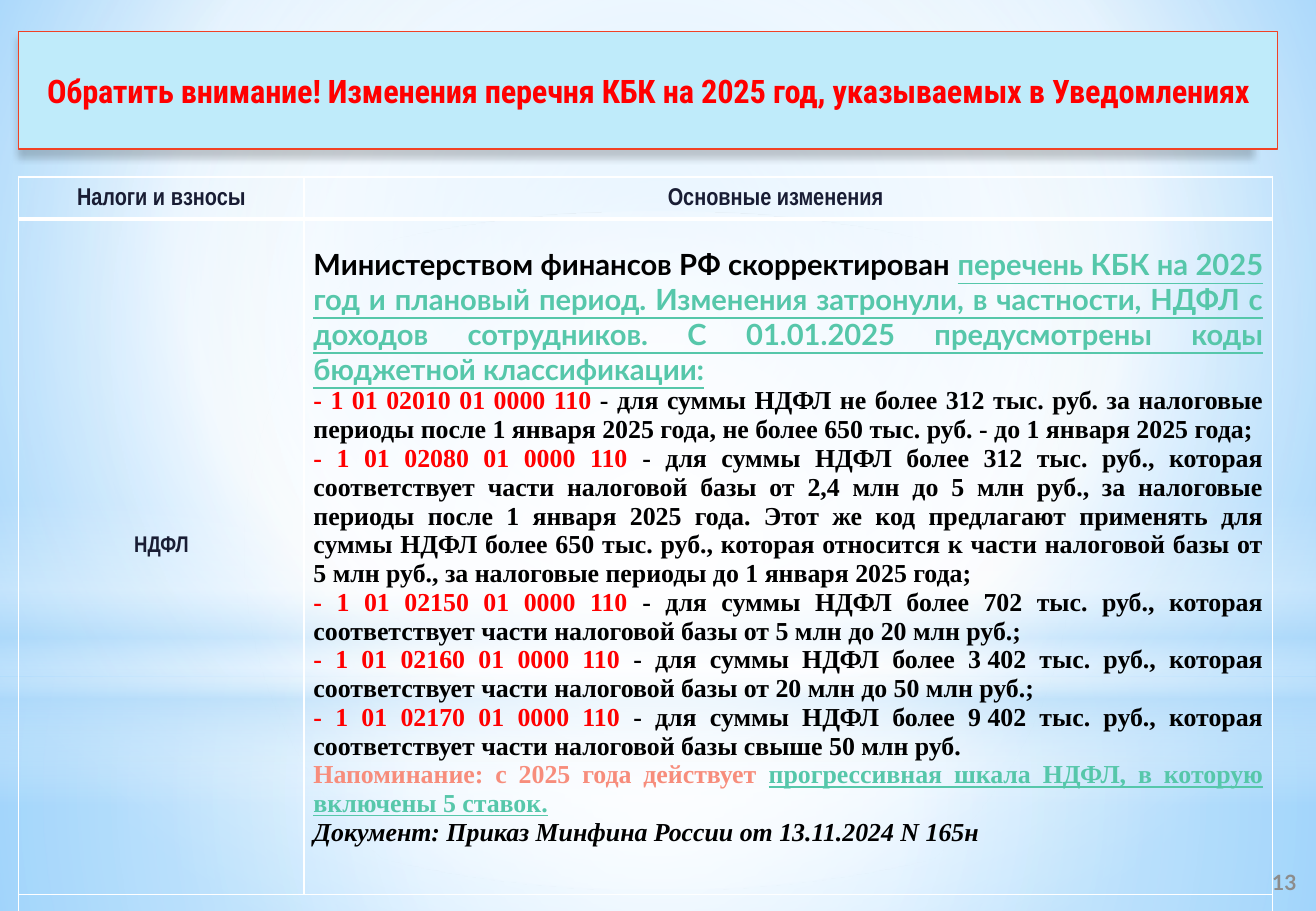
"""Builds the slide on the 2025 changes to the list of budget classification codes."""
from lxml.etree import SubElement
from pptx import Presentation
from pptx.dml.color import RGBColor
from pptx.enum.shapes import MSO_SHAPE as Shape
from pptx.enum.text import MSO_ANCHOR as Anchor, MSO_AUTO_SIZE as AutoSize, PP_ALIGN as Align
from pptx.oxml import parse_xml
from pptx.oxml.ns import nsdecls, qn
from pptx.util import Inches, Pt

RED = RGBColor(0xFF, 0x00, 0x00)
BLACK = RGBColor(0x00, 0x00, 0x00)
WHITE = RGBColor(0xFF, 0xFF, 0xFF)
NAVY = RGBColor(0x19, 0x1D, 0x34)
MINT = RGBColor(0x56, 0xC7, 0xAA)
SALMON = RGBColor(0xF7, 0x8D, 0x7C)
GREY = RGBColor(0x8C, 0x8C, 0x8C)
PALE_CYAN = RGBColor(0xBF, 0xEB, 0xFA)
ORANGE_RED = RGBColor(0xF1, 0x41, 0x24)
SKY = RGBColor(0x9E, 0xD5, 0xFF)
DEEP_SKY = RGBColor(0x5B, 0xB9, 0xFF)
HAZE = RGBColor(0xB4, 0xDC, 0xFA)

NBSP = chr(160)
HEADLINE = "Обратить внимание! Изменения перечня КБК на 2025 год, указываемых в Уведомлениях"
HEADINGS = (f"Налоги и{NBSP}взносы", "Основные изменения")
TAX = "НДФЛ"
PAGE = "13"
INTRO = (
    "Министерством финансов РФ скорректирован ",
    "перечень КБК на 2025 год и плановый период. Изменения затронули, в частности, "
    "НДФЛ с доходов сотрудников. С 01.01.2025 предусмотрены коды бюджетной классификации:",
)
CODES = [
    ("02010", "не более 312 тыс. руб. за налоговые периоды после 1 января 2025 года, "
              "не более 650 тыс. руб. - до 1 января 2025 года;"),
    ("02080", "более 312 тыс. руб., которая соответствует части налоговой базы от 2,4 млн "
              "до 5 млн руб., за налоговые периоды после 1 января 2025 года. Этот же код "
              "предлагают применять для суммы НДФЛ более 650 тыс. руб., которая относится "
              "к части налоговой базы от 5 млн руб., за налоговые периоды до 1 января 2025 года;"),
    ("02150", "более 702 тыс. руб., которая соответствует части налоговой базы "
              "от 5 млн до 20 млн руб.;"),
    ("02160", f"более 3{NBSP}402 тыс. руб., которая соответствует части налоговой базы "
              "от 20 млн до 50 млн руб.;"),
    ("02170", f"более 9{NBSP}402 тыс. руб., которая соответствует части налоговой базы "
              "свыше 50 млн руб."),
]
REMINDER = ("Напоминание: с 2025 года действует ",
            "прогрессивная шкала НДФЛ, в которую включены 5 ставок.")
DOCUMENT = "Документ: Приказ Минфина России от 13.11.2024 N 165н"

WIDTH, HEIGHT = 813 / 72, 563 / 72
MARGIN = 0.16
HORIZON = HEIGHT - 2
COLUMNS = (2.45, 8.31)
ROWS = (0.36, 5.8, 0.38)
CENTRE = (50, 50, 50, 50)

BACKDROP = [(0, SKY, 100), (60, WHITE, 100), (100, DEEP_SKY, 100)]
GLOWS = [
    (Shape.RECTANGLE, HORIZON, 2, CENTRE, [(0, WHITE, 91), (37, WHITE, 76), (100, HAZE, 79)]),
    (Shape.RECTANGLE, 0, HORIZON, CENTRE, [(0, WHITE, 89), (48, WHITE, 62), (100, HAZE, 79)]),
    (Shape.RECTANGLE, 4.3, 2.61, None,
     [(0, WHITE, 0), (29, WHITE, 30), (45, HAZE, 40), (55, WHITE, 26), (65, HAZE, 60),
      (100, WHITE, 0)]),
    (Shape.OVAL, 1.82, HORIZON, CENTRE, [(0, WHITE, 100), (56, WHITE, 0)]),
]


def set_gradient(fill, holder, stops, focus):
    fill.gradient()
    blank = holder.find(".//" + qn("a:gradFill"))
    marks = "".join(
        f'<a:gs pos="{place * 1000}"><a:srgbClr val="{color}">'
        f'<a:alpha val="{opacity * 1000}"/></a:srgbClr></a:gs>'
        for place, color, opacity in stops)
    if focus:
        sides = " ".join(f'{side}="{share * 1000}"' for side, share in zip("ltrb", focus))
        course = f'<a:path path="circle"><a:fillToRect {sides}/></a:path>'
    else:
        course = '<a:lin ang="5400000" scaled="0"/>'
    blank.getparent().replace(blank, parse_xml(
        f'<a:gradFill {nsdecls("a")} rotWithShape="1"><a:gsLst>{marks}</a:gsLst>{course}</a:gradFill>'))


def write(paragraph, runs, align, size, font, italic=False):
    paragraph.alignment = align
    for words, color, underlined in runs:
        run = paragraph.add_run()
        run.text = words
        run.font.size, run.font.name = Pt(size), font
        run.font.bold, run.font.italic, run.font.underline = True, italic, underlined
        run.font.color.rgb = color


def set_borders(cell, bottom):
    tc_pr = cell._tc.get_or_add_tcPr()
    for place, (side, points) in enumerate(zip("LRTB", (1, 1, 1, bottom))):
        tc_pr.insert(place, parse_xml(
            f'<a:ln{side} {nsdecls("a")} w="{Pt(points)}"><a:solidFill>'
            f'<a:srgbClr val="{WHITE}"/></a:solidFill></a:ln{side}>'))


def add_backdrop(slide):
    set_gradient(slide.background.fill, slide._element, BACKDROP, (20, 10, 20, 60))
    for outline, top, height, focus, stops in GLOWS:
        glow = slide.shapes.add_shape(outline, 0, Inches(top), Inches(WIDTH), Inches(height))
        glow.shadow.inherit = False
        glow.line.fill.background()
        set_gradient(glow.fill, glow._element, stops, focus)


def add_headline(slide):
    title = slide.shapes.title
    slide.shapes._spTree.append(title._element)
    title.left, title.top = Inches(MARGIN), Inches(0.27)
    title.width, title.height = Inches(10.8), Inches(1.01)
    title.fill.solid()
    title.fill.fore_color.rgb = PALE_CYAN
    title.line.color.rgb = ORANGE_RED
    title.line.width = Pt(0.75)
    effects = SubElement(title._element.spPr, qn("a:effectLst"))
    effects.append(parse_xml(
        f'<a:outerShdw {nsdecls("a")} blurRad="{Pt(5)}" dist="{Pt(4)}" dir="5400000" sx="98000" '
        f'algn="t" rotWithShape="0"><a:srgbClr val="{BLACK}"><a:alpha val="20000"/></a:srgbClr>'
        '</a:outerShdw>'))
    frame = title.text_frame
    frame.auto_size, frame.word_wrap = AutoSize.NONE, True
    frame.vertical_anchor = Anchor.MIDDLE
    frame.margin_left = frame.margin_right = frame.margin_top = frame.margin_bottom = 0
    line = frame.paragraphs[0]
    line.space_before = Pt(4)
    write(line, [(HEADLINE, RED, False)], Align.CENTER, 20, "Roboto Condensed")
    line.runs[0].font._element.set("spc", "-13")


def add_changes(slide):
    table = slide.shapes.add_table(
        len(ROWS), len(COLUMNS), Inches(MARGIN), Inches(1.52),
        Inches(sum(COLUMNS)), Inches(sum(ROWS))).table
    table.first_row = table.horz_banding = False
    for column, width in zip(table.columns, COLUMNS):
        column.width = Inches(width)
    for index, (row, height) in enumerate(zip(table.rows, ROWS)):
        row.height = Inches(height)
        for cell in row.cells:
            cell.fill.background()
            cell.vertical_anchor = Anchor.MIDDLE
            cell.margin_left = cell.margin_right = Inches(0.08)
            cell.margin_top = cell.margin_bottom = Inches(0.05)
            set_borders(cell, 1 if index else 3)
    table.cell(2, 0).merge(table.cell(2, 1))

    labels = [(table.cell(0, place), words, 15) for place, words in enumerate(HEADINGS)]
    for cell, words, size in labels + [(table.cell(1, 0), TAX, 14)]:
        label = cell.text_frame.paragraphs[0]
        label.line_spacing = 1.07
        write(label, [(words, NAVY, False)], Align.CENTER, size, "Arial Narrow")
    table.cell(0, 1).margin_right = Inches(0.3)
    table.cell(1, 0).margin_bottom = Inches(0.23)

    details = table.cell(1, 1)
    details.margin_bottom = Inches(0.22)
    frame = details.text_frame
    write(frame.paragraphs[0], [(INTRO[0], BLACK, False), (INTRO[1], MINT, True)],
          Align.JUSTIFY, 18, "Lato")
    notes = [[(f"- 1 01 {code} 01 0000 110 ", RED, False),
              (f"- для суммы НДФЛ {rule}", BLACK, False)] for code, rule in CODES]
    notes.append([(REMINDER[0], SALMON, False), (REMINDER[1], MINT, True)])
    for runs in notes:
        write(frame.add_paragraph(), runs, Align.JUSTIFY, 16, "Times New Roman")
    write(frame.add_paragraph(), [(DOCUMENT, BLACK, False)],
          Align.LEFT, 16, "Times New Roman", italic=True)


def add_page_number(slide):
    frame = slide.shapes.add_textbox(
        Inches(9.89), Inches(7.36), Inches(2.26), Inches(0.42)).text_frame
    frame.word_wrap = True
    frame.vertical_anchor = Anchor.MIDDLE
    write(frame.paragraphs[0], [(PAGE, GREY, False)], Align.CENTER, 13, "Lato")


def main():
    deck = Presentation()
    deck.slide_width, deck.slide_height = Inches(WIDTH), Inches(HEIGHT)
    slide = deck.slides.add_slide(deck.slide_layouts[5])
    add_backdrop(slide)
    add_headline(slide)
    add_changes(slide)
    add_page_number(slide)
    deck.save("out.pptx")


if __name__ == "__main__":
    main()
